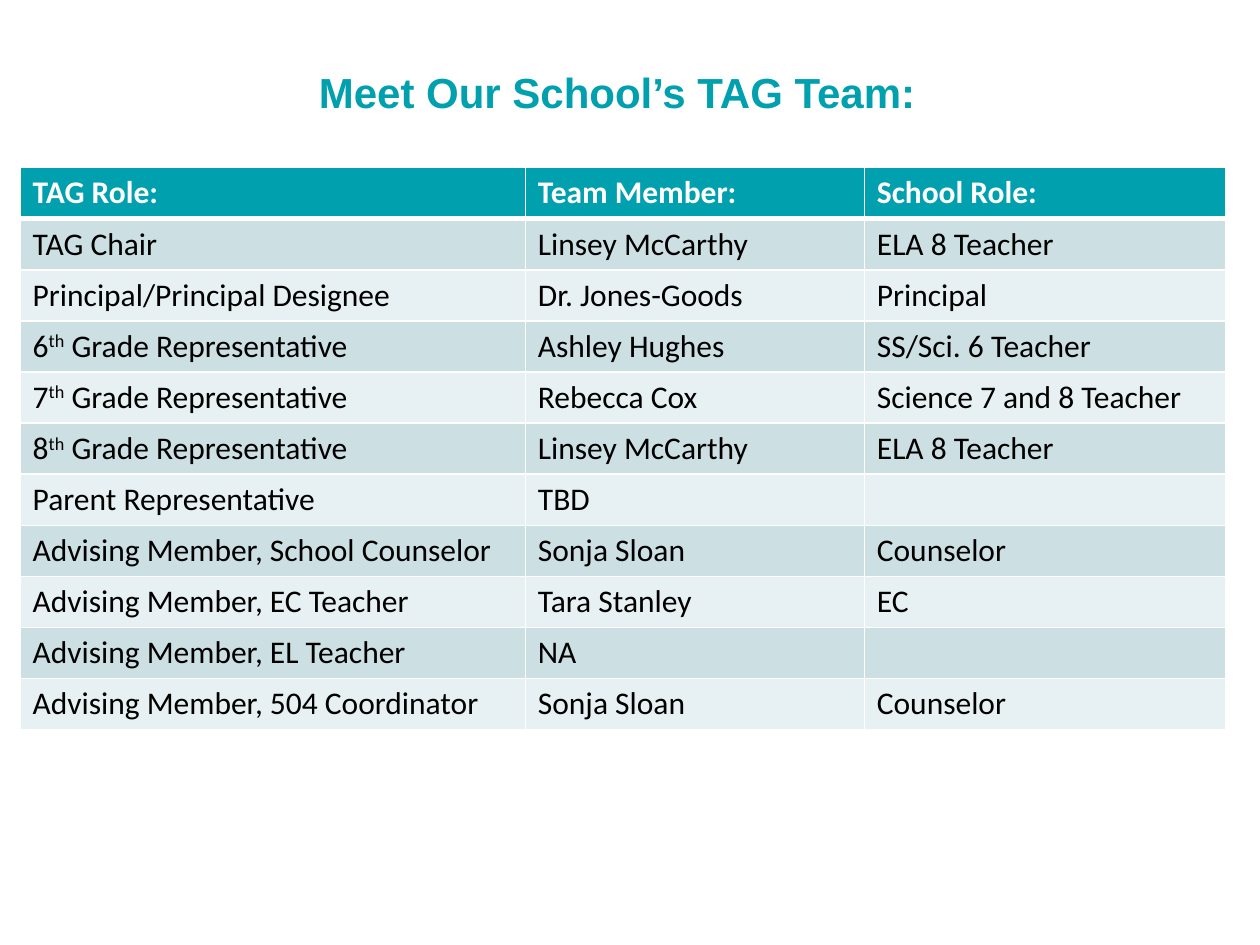
import dataclasses

import pptx
import pptx.dml.color
import pptx.enum.text
import pptx.oxml
import pptx.oxml.ns
import pptx.util

Pt = pptx.util.Pt
COLORS = {"teal": "00A0AF", "white": "FFFFFF", "black": "000000",
          "band_dark": "CCDFE3", "band_light": "E7F0F2"}
LEFT, WIDTH = 11.5, 689
TITLE_TOP, TITLE_HEIGHT = 33.1, 38.9
TABLE_TOP, ROW_HEIGHT = 95.8, 29.2
COLUMN_WIDTHS = (288.7, 193.7, 206.6)
THIN, THICK = 1, 3
ORDINAL = "th"


@dataclasses.dataclass(frozen=True)
class Member:
    tag_role: str
    name: str
    school_role: str = ""
    grade: str = ""


HEADER = Member("TAG Role:", "Team Member:", "School Role:")
TEAM = (
    Member("TAG Chair", "Linsey McCarthy", "ELA 8 Teacher"),
    Member("Principal/Principal Designee", "Dr. Jones-Goods", "Principal"),
    Member(" Grade Representative", "Ashley Hughes", "SS/Sci. 6 Teacher", "6"),
    Member(" Grade Representative", "Rebecca Cox", "Science 7 and 8 Teacher", "7"),
    Member(" Grade Representative", "Linsey McCarthy", "ELA 8 Teacher", "8"),
    Member("Parent Representative", "TBD"),
    Member("Advising Member, School Counselor", "Sonja Sloan", "Counselor"),
    Member("Advising Member, EC Teacher", "Tara Stanley", "EC"),
    Member("Advising Member, EL Teacher", "NA"),
    Member("Advising Member, 504 Coordinator", "Sonja Sloan", "Counselor"),
)


def rgb(color: str) -> pptx.dml.color.RGBColor:
    return pptx.dml.color.RGBColor.from_string(COLORS[color])


def add_run(paragraph, text: str, color: str, font_format: dict):
    run = paragraph.add_run()
    run.text = text
    for attribute, value in font_format.items():
        setattr(run.font, attribute, value)
    run.font.color.rgb = rgb(color)
    return run


def set_borders(cell, top: float, bottom: float) -> None:
    """Draw white cell borders; call before the fill, which must follow them."""
    properties = cell._tc.get_or_add_tcPr()
    for side, width in {"L": THIN, "R": THIN, "T": top, "B": bottom}.items():
        properties.append(pptx.oxml.parse_xml(
            f'<a:ln{side} {pptx.oxml.ns.nsdecls("a")} w="{Pt(width)}">'
            f'<a:solidFill><a:srgbClr val="{COLORS["white"]}"/></a:solidFill>'
            f'</a:ln{side}>'))


def add_title(slide) -> None:
    title = slide.shapes.title
    place = {"left": Pt(LEFT), "top": Pt(TITLE_TOP),
             "width": Pt(WIDTH), "height": Pt(TITLE_HEIGHT)}
    for attribute, value in place.items():
        setattr(title, attribute, value)
    title.text_frame.vertical_anchor = pptx.enum.text.MSO_ANCHOR.MIDDLE
    heading = title.text_frame.paragraphs[0]
    heading.alignment = pptx.enum.text.PP_ALIGN.CENTER
    heading.line_spacing = Pt(28)
    add_run(heading, "Meet Our School’s TAG Team: ", "teal",
            {"name": "Arial", "size": Pt(24), "bold": True})


def fill_row(cells, member: Member, index: int) -> None:
    is_header = index == 0
    band = "teal" if is_header else "band_dark" if index % 2 else "band_light"
    color = "white" if is_header else "black"
    font_format = {"name": "Calibri", "size": Pt(18), "bold": is_header}
    texts = (member.tag_role, member.name, member.school_role)
    for column, (cell, text) in enumerate(zip(cells, texts)):
        set_borders(cell, top=THICK if index == 1 else THIN,
                    bottom=THICK if is_header else THIN)
        cell.fill.solid()
        cell.fill.fore_color.rgb = rgb(band)
        paragraph = cell.text_frame.paragraphs[0]
        if column == 0 and member.grade:
            add_run(paragraph, member.grade, color, font_format)
            ordinal = add_run(paragraph, ORDINAL, color, font_format)
            ordinal._r.get_or_add_rPr().set("baseline", "30000")
        if text:
            add_run(paragraph, text, color, font_format)
        else:
            paragraph.font.size = font_format["size"]


def add_team_table(slide) -> None:
    members = (HEADER, *TEAM)
    table = slide.shapes.add_table(
        len(members), len(COLUMN_WIDTHS), Pt(LEFT), Pt(TABLE_TOP),
        Pt(WIDTH), Pt(ROW_HEIGHT * len(members))).table
    for column, width in zip(table.columns, COLUMN_WIDTHS):
        column.width = Pt(width)
    for index, (row, member) in enumerate(zip(table.rows, members)):
        row.height = Pt(ROW_HEIGHT)
        fill_row(row.cells, member, index)


def main() -> None:
    presentation = pptx.Presentation()
    presentation.slide_width, presentation.slide_height = Pt(720), Pt(540)
    title_only = presentation.slide_layouts.get_by_name("Title Only")
    slide = presentation.slides.add_slide(title_only)
    add_title(slide)
    add_team_table(slide)
    presentation.save("out.pptx")


if __name__ == "__main__":
    main()
